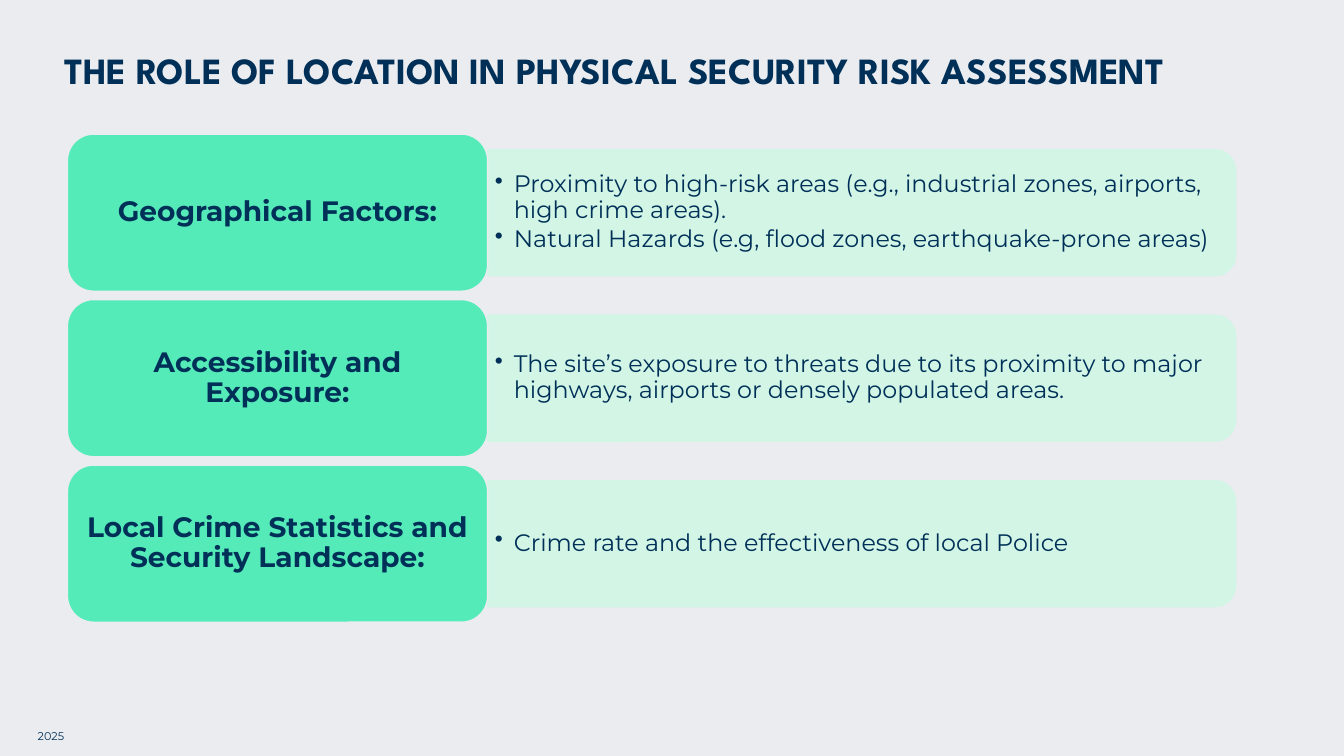
from dataclasses import dataclass

import pptx
import pptx.util
from lxml import etree
from pptx.dml.color import RGBColor
from pptx.enum.shapes import MSO_SHAPE
from pptx.enum.text import MSO_ANCHOR, PP_ALIGN
from pptx.oxml.ns import qn
from pptx.util import Cm, Pt


@dataclass(frozen=True)
class Theme:
    back: str = "EBECF0"
    ink: str = "003057"
    card: str = "55EBB9"
    panel: str = "D1F7E6"
    head: str = "League Spartan"
    body: str = "Montserrat"
    title: float = 26.4
    label: float = 20
    point: float = 17
    foot: float = 8


THEME = Theme()

ROWS = [
    ("Geographical Factors:", [
        "Proximity to high-risk areas (e.g., industrial zones, airports, "
        "high crime areas).",
        "Natural Hazards (e.g, flood zones, earthquake-prone areas)",
    ]),
    ("Accessibility and Exposure:", [
        "The site’s exposure to threats due to its proximity to major "
        "highways, airports or densely populated areas.",
    ]),
    ("Local Crime Statistics and Security Landscape:", [
        "Crime rate and the effectiveness of local Police",
    ]),
]

LEFT, TOP, PITCH = Cm(1.7), Cm(3.38), Cm(4.17)
CARD_W, CARD_H = Cm(10.59), Cm(3.96)
PANEL_W, PANEL_H = Cm(18.85), Cm(3.18)
TEXT_W, TEXT_H = Cm(18.69), Cm(2.87)


def style(para, size, face=THEME.body, bold=False, lines=1.0):
    para.line_spacing = lines
    para.font.size = Pt(size)
    para.font.name = face
    para.font.bold = bold
    para.font.color.rgb = RGBColor.from_string(THEME.ink)


def inset(frame, side):
    frame.word_wrap = True
    frame.vertical_anchor = MSO_ANCHOR.MIDDLE
    frame.margin_left = frame.margin_right = Cm(side)
    frame.margin_top = frame.margin_bottom = Cm(0.1)


def add_text(slide, box, text, size, **look):
    frame = slide.shapes.add_textbox(*box).text_frame
    frame.word_wrap = True
    frame.text = text
    style(frame.paragraphs[0], size, **look)


def add_block(slide, kind, box, fill, line):
    shape = slide.shapes.add_shape(kind, *box)
    shape.shadow.inherit = False
    shape.fill.solid()
    shape.fill.fore_color.rgb = RGBColor.from_string(fill)
    shape.line.color.rgb = RGBColor.from_string(line)
    shape.line.width = Pt(1)
    return shape


def add_panel(slide, mid):
    """Add a translucent bar, turned so that its right end is rounded."""
    left = LEFT + CARD_W + (PANEL_W - PANEL_H) // 2
    box = left, mid - PANEL_W // 2, PANEL_H, PANEL_W
    shape = add_block(slide, MSO_SHAPE.ROUND_2_SAME_RECTANGLE, box,
                      THEME.panel, THEME.panel)
    shape.rotation = 90
    for color in shape.element.spPr.iter(qn("a:srgbClr")):
        etree.SubElement(color, qn("a:alpha"), val="90000")


def add_points(slide, mid, points):
    box = slide.shapes.add_textbox(LEFT + CARD_W, mid - TEXT_H // 2,
                                   TEXT_W, TEXT_H)
    frame = box.text_frame
    inset(frame, 0.18)
    frame.text = "\n".join(points)
    for para in frame.paragraphs:
        props = para._p.get_or_add_pPr()
        props.set("marL", str(Cm(0.48)))
        props.set("indent", str(-Cm(0.48)))
        etree.SubElement(props, qn("a:buChar"), char="•")
        style(para, THEME.point, lines=0.9)
        para.space_after = Pt(2.5)


def add_card(slide, mid, label):
    box = LEFT, mid - CARD_H // 2, CARD_W, CARD_H
    shape = add_block(slide, MSO_SHAPE.ROUNDED_RECTANGLE, box,
                      THEME.card, THEME.back)
    frame = shape.text_frame
    inset(frame, 0.2)
    frame.text = label
    para = frame.paragraphs[0]
    para.alignment = PP_ALIGN.CENTER
    style(para, THEME.label, bold=True, lines=0.9)


def main():
    deck = pptx.Presentation()
    deck.slide_width, deck.slide_height = Cm(33.87), Cm(19.05)
    slide = deck.slides.add_slide(deck.slide_layouts[6])
    slide.background.fill.solid()
    slide.background.fill.fore_color.rgb = RGBColor.from_string(THEME.back)

    add_text(slide, (Cm(0.7), Cm(18.26), Cm(6.65), Cm(0.61)),
             "2025", THEME.foot)
    add_text(slide, (Cm(1.37), Cm(1.3), Cm(31.14), Cm(1.68)),
             "THE ROLE OF LOCATION IN PHYSICAL SECURITY RISK ASSESSMENT",
             THEME.title, face=THEME.head, bold=True, lines=0.8)
    for row, (label, points) in enumerate(ROWS):
        mid = TOP + row * PITCH + CARD_H // 2
        add_panel(slide, mid)
        add_points(slide, mid, points)
        add_card(slide, mid, label)
    deck.save("out.pptx")


if __name__ == "__main__":
    main()
